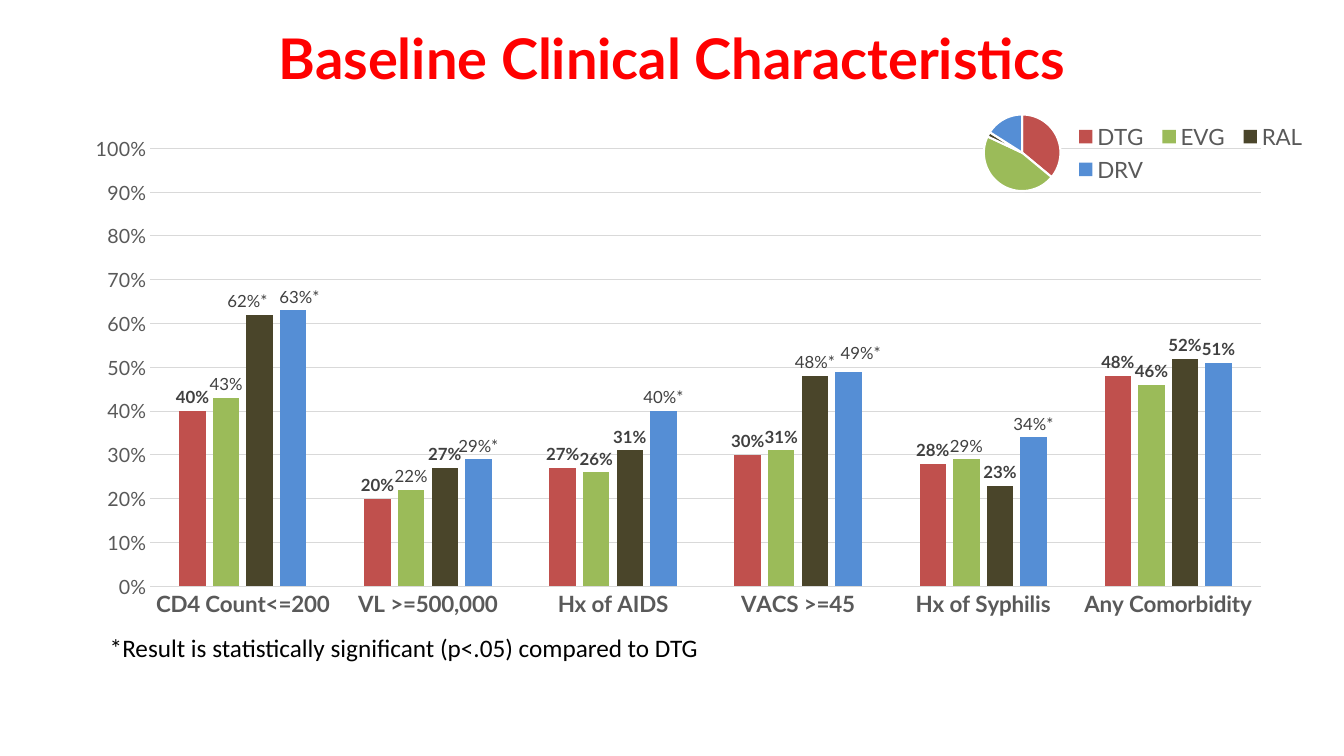
from lxml.etree import SubElement
from pptx import Presentation
from pptx.chart.data import CategoryChartData
from pptx.dml.color import RGBColor
from pptx.enum.chart import XL_CHART_TYPE, XL_LABEL_POSITION, XL_LEGEND_POSITION, XL_TICK_MARK
from pptx.enum.text import MSO_ANCHOR, PP_ALIGN
from pptx.oxml import parse_xml
from pptx.oxml.ns import nsdecls, qn
from pptx.util import Inches, Pt

# Content
TITLE = "Baseline Clinical Characteristics"
FOOTNOTE = "*Result is statistically significant (p<.05) compared to DTG"
CATEGORIES = ["CD4 Count<=200", "VL >=500,000", "Hx of AIDS",
              "VACS >=45", "Hx of Syphilis", "Any Comorbidity"]
RED = RGBColor(0xC0, 0x50, 0x4D)
GREEN = RGBColor(0x9B, 0xBB, 0x59)
BROWN = RGBColor(0x4A, 0x45, 0x2A)
BLUE = RGBColor(0x55, 0x8E, 0xD5)
# Drug, colour, share of patients in the pie, rate per category, own label per category
DRUGS = [
    ("DTG", RED, 36, [0.40, 0.20, 0.27, 0.30, 0.28, 0.48], {}),
    ("EVG", GREEN, 46, [0.43, 0.22, 0.26, 0.31, 0.29, 0.46],
     {0: "43%", 1: "22%", 4: "29%"}),
    ("RAL", BROWN, 2, [0.62, 0.27, 0.31, 0.48, 0.23, 0.52],
     {0: "62%*", 3: "48%*"}),
    ("DRV", BLUE, 16, [0.63, 0.29, 0.40, 0.49, 0.34, 0.51],
     {0: "63%*", 1: "29%*", 2: "40%*", 3: "49%*", 4: "34%*"}),
]
# (drug, category): label shift as a fraction of the chart
LABEL_SHIFTS = {(2, 0): (-0.01, 0), (3, 0): (0.005, 0), (3, 3): (0.01, -0.01)}

TITLE_RED = RGBColor(0xFF, 0x00, 0x00)
BLACK = RGBColor(0x00, 0x00, 0x00)
WHITE = RGBColor(0xFF, 0xFF, 0xFF)
AXIS_GRAY = RGBColor(0x59, 0x59, 0x59)
LABEL_GRAY = RGBColor(0x40, 0x40, 0x40)
GRID_GRAY = RGBColor(0xD9, 0xD9, 0xD9)


def set_font(font, name, size, color, bold=False):
    font.name, font.size, font.bold = name, Pt(size), bold
    font.color.rgb = color


def set_line(line, color, width):
    line.color.rgb = color
    line.width = Pt(width)


def add_text(slide, box, text, name, size, color, bold=False):
    shape = slide.shapes.add_textbox(*map(Inches, box))
    shape.text_frame.word_wrap = True
    paragraph = shape.text_frame.paragraphs[0]
    paragraph.text = text
    set_font(paragraph.font, name, size, color, bold)
    return shape.text_frame


def add_chart(slide, kind, box, data):
    chart = slide.shapes.add_chart(kind, *map(Inches, box), data).chart
    chart.has_title = False
    set_font(chart.font, "Calibri", 10, BLACK)
    return chart


def place(chart, query, index, **values):
    """Give a chart element a manual layout, as the child at index."""
    parent = chart.element.xpath(query)[0]
    for old in parent.findall(qn("c:layout")):
        parent.remove(old)
    layout = parse_xml(f"<c:layout {nsdecls('c')}><c:manualLayout/></c:layout>")
    for tag, value in values.items():
        SubElement(layout[0], qn(f"c:{tag}")).set("val", str(value))
    parent.insert(index, layout)


def add_rates_chart(slide):
    data = CategoryChartData(number_format="0%")
    data.categories = CATEGORIES
    for name, _, _, rates, _ in DRUGS:
        data.add_series(name, rates)
    chart = add_chart(slide, XL_CHART_TYPE.COLUMN_CLUSTERED, (0.82, 1.11, 12.21, 5.1), data)
    plot = chart.plots[0]
    plot.gap_width, plot.overlap, plot.vary_by_categories = 219, -27, False

    # Axes
    category_axis, value_axis = chart.category_axis, chart.value_axis
    for axis in (category_axis, value_axis):
        axis.major_tick_mark = axis.minor_tick_mark = XL_TICK_MARK.NONE
    set_font(category_axis.tick_labels.font, "Lato", 16, AXIS_GRAY, True)
    set_font(value_axis.tick_labels.font, "Lato", 14, AXIS_GRAY)
    set_line(category_axis.format.line, GRID_GRAY, 0.75)
    set_line(value_axis.major_gridlines.format.line, GRID_GRAY, 0.75)
    value_axis.format.line.fill.background()
    value_axis.minimum_scale, value_axis.maximum_scale, value_axis.major_unit = 0, 1, 0.1
    value_axis.tick_labels.number_format = "0%"
    value_axis.tick_labels.number_format_is_linked = False

    # Columns and their labels
    for series, (_, color, _, _, own_labels) in zip(plot.series, DRUGS):
        series.format.fill.solid()
        series.format.fill.fore_color.rgb = color
        labels = series.data_labels
        labels.show_value = True
        labels.number_format, labels.number_format_is_linked = "0%", False
        labels.position = XL_LABEL_POSITION.OUTSIDE_END
        set_font(labels.font, "Lato", 12, LABEL_GRAY, True)
        for category, text in own_labels.items():
            label = series.points[category].data_label
            run = label.text_frame.paragraphs[0].add_run()
            run.text = text
            set_font(run.font, "Lato", 12, LABEL_GRAY)
            label.position = XL_LABEL_POSITION.OUTSIDE_END
    for (drug, category), (x, y) in LABEL_SHIFTS.items():
        query = f".//c:ser[c:idx/@val='{drug}']//c:dLbl[c:idx/@val='{category}']"
        place(chart, query, 1, x=x, y=y)

    # Legend and plot area
    chart.has_legend = True
    chart.legend.position = XL_LEGEND_POSITION.CORNER
    chart.legend.include_in_layout = False
    set_font(chart.legend.font, "Lato", 16, AXIS_GRAY)
    place(chart, ".//c:legend", 1, xMode="edge", yMode="edge", x=0.8, y=0.01, w=0.2, h=0.14)
    place(chart, ".//c:plotArea", 0, layoutTarget="inner", xMode="edge", yMode="edge",
          x=0.055, y=0.071, w=0.902, h=0.852)


def add_share_pie(slide):
    data = CategoryChartData()
    data.categories = ["1", "2", "3", "4"]
    data.add_series("Series 1", [share for _, _, share, _, _ in DRUGS])
    chart = add_chart(slide, XL_CHART_TYPE.PIE, (9.1, 1.11, 2.15, 0.81), data)
    chart.has_legend = False
    for index, (_, color, _, _, _) in enumerate(DRUGS):
        slice_format = chart.plots[0].series[0].points[index].format
        slice_format.fill.solid()
        slice_format.fill.fore_color.rgb = color
        set_line(slice_format.line, WHITE, 1.5)
    place(chart, ".//c:plotArea", 0, layoutTarget="inner", xMode="edge", yMode="edge",
          x=0.268, y=0.032, w=0.43, h=0.939)


def main():
    presentation = Presentation()
    presentation.slide_width, presentation.slide_height = Inches(13.33), Inches(7.5)
    slide = presentation.slides.add_slide(presentation.slide_layouts[6])
    title = add_text(slide, (0.82, 0.16, 11.69, 0.81), TITLE, "Lato", 40, TITLE_RED, True)
    title.vertical_anchor = MSO_ANCHOR.MIDDLE
    title.paragraphs[0].alignment = PP_ALIGN.CENTER
    add_rates_chart(slide)
    add_text(slide, (0.99, 6.22, 6.94, 0.42), FOOTNOTE, "Calibri", 18, BLACK)
    add_share_pie(slide)
    presentation.save("out.pptx")


if __name__ == "__main__":
    main()
